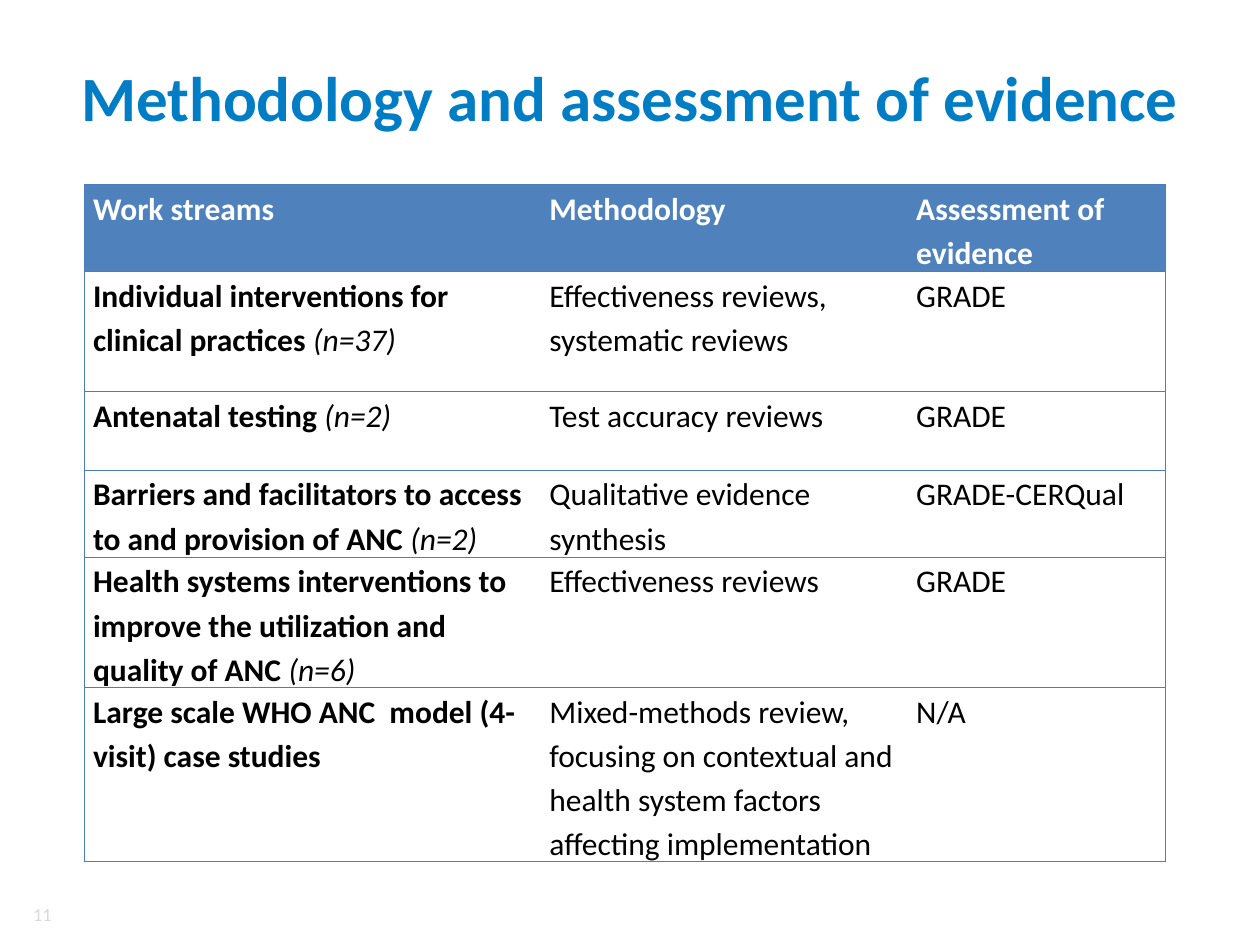
from lxml import etree
from pptx import Presentation
from pptx import util as u
from pptx.dml import color
from pptx.enum import text
from pptx.oxml import ns

Pt = u.Pt
ROWS = [
    [("Work streams", ""), "Methodology", "Assessment of evidence"],
    [("Individual interventions for clinical practices ", "(n=37)"),
     "Effectiveness reviews, systematic reviews", "GRADE"],
    [("Antenatal testing ", "(n=2)"), "Test accuracy reviews", "GRADE"],
    [("Barriers and facilitators to access to and provision of ANC ", "(n=2)"),
     "Qualitative evidence synthesis", "GRADE-CERQual"],
    [("Health systems interventions to improve the utilization and quality of ANC ", "(n=6)"),
     "Effectiveness reviews", "GRADE"],
    [("Large scale WHO ANC  model (4-visit) case studies", ""),
     "Mixed-methods review, focusing on contextual and health system factors "
     "affecting implementation", "N/A"],
]


def rgb(value):
    """Turn a hex string into a colour."""
    return color.RGBColor.from_string(value)


class Deck:
    """Hold the style and the current slide."""

    font, blue, head, border = "Calibri", "007DC5", "4F81BD", "4B7EBC"

    def __init__(self, width, height):
        """Open a presentation of the given size."""
        self.prs = Presentation()
        self.prs.slide_width, self.prs.slide_height = Pt(width), Pt(height)
        self.s = self.prs.slides.add_slide(self.prs.slide_layouts[5])

    def style(self, p, size, hue, bold=False):
        """Set the font of a paragraph."""
        f = p.font
        f.name, f.size, f.bold = self.font, Pt(size), bold
        f.color.rgb = rgb(hue)

    def title(self, words, x, y, w, h):
        """Place and format the title."""
        sp = self.s.shapes.title
        sp.left, sp.top, sp.width, sp.height = Pt(x), Pt(y), Pt(w), Pt(h)
        tf = sp.text_frame
        tf.text = words
        tf.vertical_anchor = text.MSO_ANCHOR.MIDDLE
        p = tf.paragraphs[0]
        p.alignment = text.PP_ALIGN.CENTER
        self.style(p, 36, self.blue, True)

    def number(self, words, x, y, w, h):
        """Add the page number."""
        tf = self.s.shapes.add_textbox(Pt(x), Pt(y), Pt(w), Pt(h)).text_frame
        tf.word_wrap = True
        tf.vertical_anchor = text.MSO_ANCHOR.MIDDLE
        p = tf.paragraphs[0]
        p.text = words
        p.alignment = text.PP_ALIGN.RIGHT
        self.style(p, 10.5, "D9D9D9")

    def edges(self, cell, shown):
        """Draw the shown sides of a cell and clear the others."""
        tc_pr = cell._tc.get_or_add_tcPr()
        for i, side in enumerate("LRTB"):
            ln = etree.Element(ns.qn(f"a:ln{side}"), w=str(Pt(0.75)))
            if side in shown:
                fill = etree.SubElement(ln, ns.qn("a:solidFill"))
                etree.SubElement(fill, ns.qn("a:srgbClr"), val=self.border)
            else:
                etree.SubElement(ln, ns.qn("a:noFill"))
            tc_pr.insert(i, ln)

    def cell(self, cell, content, header, first, last):
        """Fill and format one table cell."""
        cell.margin_left = cell.margin_right = Pt(5)
        cell.margin_top = cell.margin_bottom = 0
        if header:
            cell.fill.solid()
            cell.fill.fore_color.rgb = rgb(self.head)
        else:
            cell.fill.background()
        self.edges(cell, "TB" + "L" * first + "R" * last)
        p = cell.text_frame.paragraphs[0]
        p.line_spacing, p.space_before = 1.15, Pt(0)
        if last and not header:
            p.alignment = text.PP_ALIGN.JUSTIFY
        name, count = content if first else (content, "")
        p.add_run().text = name
        self.style(p, 18, "FFFFFF" if header else "000000", header or (first and not count))
        if count:
            p.runs[0].font.bold = True
            r = p.add_run()
            r.text = count
            r.font.italic = True

    def table(self, rows, x, y, widths, heights):
        """Add a table ruled between rows and around the outside."""
        tbl = self.s.shapes.add_table(len(rows), len(widths), Pt(x), Pt(y),
                                      Pt(sum(widths)), Pt(sum(heights))).table
        tbl.horz_banding = False
        for col, w in zip(tbl.columns, widths):
            col.width = Pt(w)
        for i, (row, h) in enumerate(zip(rows, heights)):
            tbl.rows[i].height = Pt(h)
            for j, content in enumerate(row):
                self.cell(tbl.cell(i, j), content, i == 0, j == 0, j == len(row) - 1)


def main():
    """Build and save the slide."""
    deck = Deck(720, 540)
    deck.number("11", 8.6, 514, 28, 17.3)
    deck.title("Methodology and assessment of evidence", 36, 21.6, 648, 67)
    deck.table(ROWS, 48.2, 105.6, [260.8, 209.6, 147.6], [45, 68.4, 45, 45, 45, 91.4])
    deck.prs.save("out.pptx")


if __name__ == "__main__":
    main()
